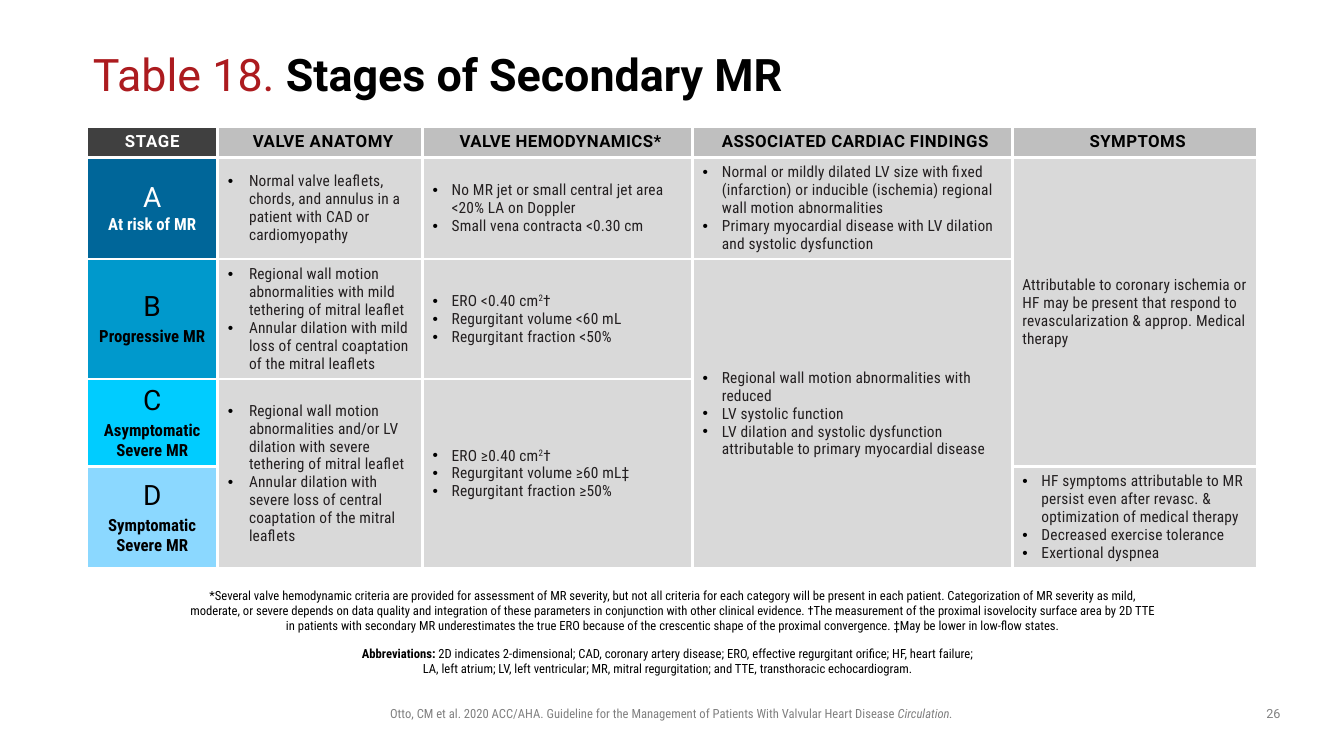
from lxml.etree import SubElement
from pptx import Presentation
from pptx.dml.color import RGBColor
from pptx.enum.text import MSO_ANCHOR as Anchor, MSO_AUTO_SIZE as AutoSize, PP_ALIGN as Align
from pptx.oxml import parse_xml
from pptx.oxml.ns import nsdecls, qn
from pptx.util import Inches, Pt

COLORS = {
    "red": "AC1B1F", "black": "000000", "white": "FFFFFF", "ink": "231F20",
    "footer": "808080", "stage_head": "404040", "head": "BFBFBF", "cell": "D9D9D9",
    "A": "006699", "B": "0099CC", "C": "00CCFF", "D": "8BD8FF",
}
ROBOTO, CONDENSED = "Roboto", "Roboto Condensed"

COLUMN_WIDTHS = [1.3, 2.03, 2.68, 3.17, 2.43]
ROW_HEIGHTS = [0.3, 1.01, 1.19, 0.87, 1.01]

# Heading and its letter spacing in points
HEADINGS = [("STAGE", 0.5), ("VALVE ANATOMY", 0.4), ("VALVE HEMODYNAMICS*", 0.3),
            ("ASSOCIATED CARDIAC FINDINGS", 0.3), ("SYMPTOMS", 0.3)]

# Letter, label, text colour, gap between the two in points
STAGES = [("A", "At risk of MR", "white", 0),
          ("B", "Progressive MR", "black", 2.5),
          ("C", "Asymptomatic Severe MR", "black", 2.5),
          ("D", "Symptomatic\nSevere MR", "black", 2.5)]

# (row, column, rows spanned, bulleted, lines); ^ marks superscript
FINDINGS = [
    (1, 1, 1, True, ["Normal valve leaflets, chords, and annulus in a patient with CAD or "
                     "cardiomyopathy"]),
    (1, 2, 1, True, ["No MR jet or small central jet area <20% LA on Doppler",
                     "Small vena contracta <0.30 cm"]),
    (1, 3, 1, True, ["Normal or mildly dilated LV size with fixed (infarction) or inducible "
                     "(ischemia) regional wall motion abnormalities",
                     "Primary myocardial disease with LV dilation and systolic dysfunction"]),
    (1, 4, 3, False, ["Attributable to coronary ischemia or HF may be present that respond to "
                      "revascularization & approp. Medical therapy"]),
    (2, 1, 1, True, ["Regional wall motion abnormalities with mild tethering of mitral leaflet",
                     "Annular dilation with mild loss of central coaptation of the mitral "
                     "leaflets"]),
    (2, 2, 1, True, ["ERO <0.40 cm^2^†", "Regurgitant volume <60 mL",
                     "Regurgitant fraction <50%"]),
    (2, 3, 3, True, ["Regional wall motion abnormalities with reduced", "LV systolic function",
                     "LV dilation and systolic dysfunction attributable to primary myocardial "
                     "disease"]),
    (3, 1, 2, True, ["Regional wall motion abnormalities and/or LV dilation with severe "
                     "tethering of mitral leaflet",
                     "Annular dilation with severe loss of central coaptation of the mitral "
                     "leaflets"]),
    (3, 2, 2, True, ["ERO ≥0.40 cm^2^†", "Regurgitant volume ≥60 mL‡",
                     "Regurgitant fraction ≥50%"]),
    (4, 4, 1, True, ["HF symptoms attributable to MR persist even after revasc. & optimization "
                     "of medical therapy",
                     "Decreased exercise tolerance", "Exertional dyspnea"]),
]

FOOTNOTE = (
    "*Several valve hemodynamic criteria are provided for assessment of MR severity, but not all "
    "criteria for each category will be present in each patient. Categorization of MR severity as "
    "mild, moderate, or severe depends on data quality and integration of these parameters in "
    "conjunction with other clinical evidence. †The measurement of the proximal isovelocity "
    "surface area by 2D TTE in patients with secondary MR underestimates the true ERO because of "
    "the crescentic shape of the proximal convergence. ‡May be lower in low-flow states.")
ABBREVIATIONS = (
    "2D indicates 2-dimensional; CAD, coronary artery disease; ERO, effective regurgitant "
    "orifice; HF, heart failure;\nLA, left atrium; LV, left ventricular; MR, mitral "
    "regurgitation; and TTE, transthoracic echocardiogram.")
CITATION = ("Otto, CM et al. 2020 ACC/AHA. Guideline for the Management of Patients With "
            "Valvular Heart Disease ")


def write(paragraph, text, size, font, color, bold=False, italic=False, spacing=0, raised=False):
    for number, line in enumerate(text.split("\n")):
        if number:
            paragraph.add_line_break()
        run = paragraph.add_run()
        run.text = line
        run.font.size, run.font.name = Pt(size), font
        run.font.bold, run.font.italic = bold, italic
        run.font.color.rgb = RGBColor.from_string(COLORS[color])
        properties = run._r.get_or_add_rPr()
        if spacing:
            properties.set("spc", str(round(spacing * 100)))
        if raised:
            properties.set("baseline", "30000")


def indent(paragraph, left, first=0):
    properties = paragraph._p.get_or_add_pPr()
    properties.set("marL", str(Inches(left)))
    properties.set("indent", str(Inches(first)))
    return properties


def add_bullet(paragraph, hang):
    properties = indent(paragraph, hang, -hang)
    color = SubElement(properties, qn("a:buClr"))
    SubElement(color, qn("a:srgbClr"), val=COLORS["black"])
    SubElement(properties, qn("a:buFont"), typeface="Arial")
    SubElement(properties, qn("a:buChar"), char="•")


def place(shape, box):
    shape.left, shape.top, shape.width, shape.height = (Inches(length) for length in box)


def style_cell(cell, color):
    cell.fill.solid()
    cell.fill.fore_color.rgb = RGBColor.from_string(COLORS[color])
    cell.vertical_anchor = Anchor.MIDDLE
    for position, side in enumerate(("lnL", "lnR", "lnT", "lnB")):
        cell._tc.get_or_add_tcPr().insert(position, parse_xml(
            f'<a:{side} {nsdecls("a")} w="{Pt(2.25)}"><a:solidFill>'
            f'<a:srgbClr val="{COLORS["white"]}"/></a:solidFill></a:{side}>'))


def add_title(slide, box):
    title = slide.shapes.title
    place(title, box)
    frame = title.text_frame
    frame.margin_left = frame.margin_right = frame.margin_top = frame.margin_bottom = 0
    frame.vertical_anchor, frame.auto_size = Anchor.MIDDLE, AutoSize.NONE
    heading = frame.paragraphs[0]
    heading.alignment, heading.line_spacing = Align.LEFT, 0.9
    write(heading, "Table 18. ", 32, ROBOTO, "red")
    write(heading, "Stages of Secondary MR", 32, ROBOTO, "black", bold=True)


def add_stage_table(slide, box):
    table = slide.shapes.add_table(len(ROW_HEIGHTS), len(COLUMN_WIDTHS),
                                   *(Inches(length) for length in box)).table
    for column, width in zip(table.columns, COLUMN_WIDTHS):
        column.width = Inches(width)
    for row, height in zip(table.rows, ROW_HEIGHTS):
        row.height = Inches(height)

    # Fills and borders
    for row in range(len(ROW_HEIGHTS)):
        for column in range(len(COLUMN_WIDTHS)):
            if row == 0:
                color = "head" if column else "stage_head"
            else:
                color = "cell" if column else STAGES[row - 1][0]
            style_cell(table.cell(row, column), color)

    # Heading row
    for column, (text, spacing) in enumerate(HEADINGS):
        heading = table.cell(0, column).text_frame.paragraphs[0]
        heading.alignment = Align.CENTER
        indent(heading, 0.06 if column else 0)
        write(heading, text, 12, ROBOTO, "black" if column else "white", True, spacing=spacing)

    # Stage column
    for row, (letter, label, color, gap) in enumerate(STAGES, 1):
        frame = table.cell(row, 0).text_frame
        letter_line, label_line = frame.paragraphs[0], frame.add_paragraph()
        letter_line.alignment = label_line.alignment = Align.CENTER
        label_line.space_before = Pt(gap)
        write(letter_line, letter, 20, ROBOTO, color)
        write(label_line, label, 12, CONDENSED, color, bold=True)

    # Findings
    for row, column, span, bulleted, lines in FINDINGS:
        cell = table.cell(row, column)
        if span > 1:
            cell.merge(table.cell(row + span - 1, column))
        for number, line in enumerate(lines):
            frame = cell.text_frame
            finding = frame.add_paragraph() if number else frame.paragraphs[0]
            if bulleted:
                add_bullet(finding, 0.21 if column == 1 else 0.19)
            for part, text in enumerate(line.split("^")):
                write(finding, text, 11, CONDENSED, "ink", spacing=0.1, raised=part % 2 == 1)


def add_abbreviations(slide, box):
    abbreviations = slide.placeholders[1]
    place(abbreviations, box)
    frame = abbreviations.text_frame
    frame.margin_left, frame.auto_size = 0, AutoSize.NONE
    line = frame.paragraphs[0]
    line.alignment, line.space_before = Align.CENTER, Pt(0)
    SubElement(indent(line, 0), qn("a:buNone"))
    write(line, "Abbreviations: ", 9, CONDENSED, "black", bold=True)
    write(line, ABBREVIATIONS, 9, CONDENSED, "black")


def add_note(slide, box, font, color, text, italic_text=""):
    frame = slide.shapes.add_textbox(*(Inches(length) for length in box)).text_frame
    frame.word_wrap = True
    note = frame.paragraphs[0]
    note.alignment = Align.CENTER
    write(note, text, 9, font, color)
    if italic_text:
        write(note, italic_text, 9, font, color, italic=True)


def main():
    deck = Presentation()
    deck.slide_width, deck.slide_height = Inches(13.33), Inches(7.5)
    slide = deck.slides.add_slide(deck.slide_layouts[1])
    add_title(slide, (0.92, 0.4, 11.5, 0.72))
    add_stage_table(slide, (0.86, 1.26, 11.61, 4.38))
    add_note(slide, (1.77, 5.78, 9.8, 0.56), CONDENSED, "black", FOOTNOTE)
    add_abbreviations(slide, (1.38, 6.36, 10.58, 0.3))
    add_note(slide, (3.17, 6.95, 6.98, 0.25), CONDENSED, "footer", CITATION, "Circulation.")
    add_note(slide, (12.42, 6.95, 0.42, 0.26), ROBOTO, "footer", "26")
    deck.save("out.pptx")


if __name__ == "__main__":
    main()
